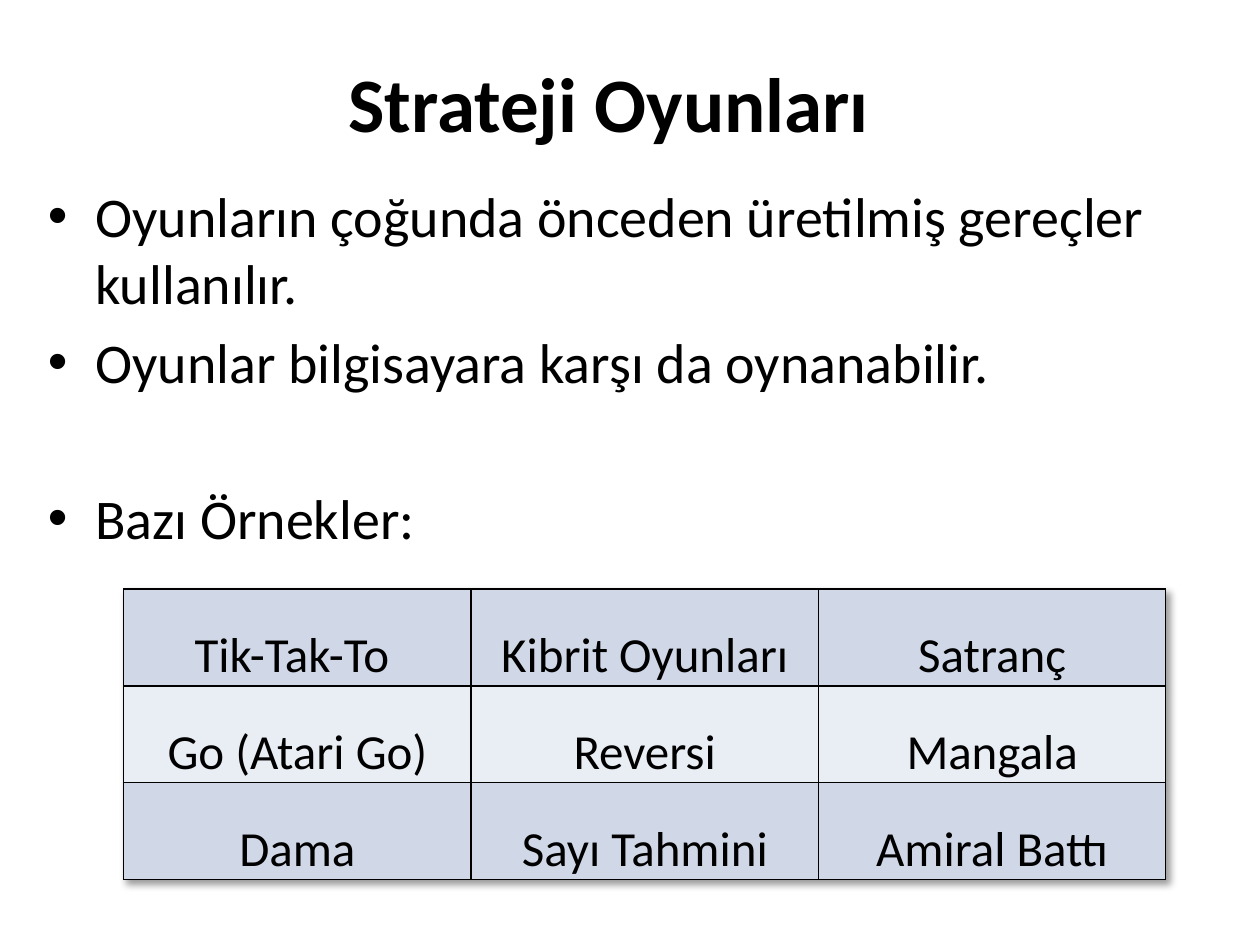
from lxml.etree import SubElement
from pptx import Presentation
from pptx.dml.color import RGBColor
from pptx.enum.text import MSO_ANCHOR, PP_ALIGN
from pptx.oxml import parse_xml
from pptx.oxml.ns import nsdecls, qn
from pptx.util import Pt

BLACK = RGBColor(0x00, 0x00, 0x00)
BANDS = [RGBColor(0xD0, 0xD8, 0xE8), RGBColor(0xE9, 0xED, 0xF4)]
FONT = "Calibri"

POINTS = [
    "Oyunların çoğunda önceden üretilmiş gereçler kullanılır.",
    "Oyunlar bilgisayara karşı da oynanabilir.",
    "Bazı Örnekler:",
]
GAMES = [
    ["Tik-Tak-To ", "Kibrit Oyunları", "Satranç"],
    ["Go (Atari Go)", "Reversi", "Mangala"],
    ["Dama", "Sayı Tahmini", "Amiral Battı"],
]


def place(shape, left, top, width, height):
    shape.left, shape.top = Pt(left), Pt(top)
    shape.width, shape.height = Pt(width), Pt(height)


def style(para, size, bold=False):
    for run in para.runs:
        font = run.font
        font.name, font.size, font.bold = FONT, Pt(size), bold
        font.color.rgb = BLACK


def add_title(slide):
    title = slide.shapes.title
    place(title, 36, 21.6, 624.2, 72.7)
    frame = title.text_frame
    frame.text = "Strateji Oyunları"
    frame.vertical_anchor = MSO_ANCHOR.MIDDLE
    para = frame.paragraphs[0]
    para.alignment = PP_ALIGN.CENTER
    style(para, 44, bold=True)


def add_list(slide):
    body = slide.placeholders[1]
    place(body, 20.2, 100.1, 680.4, 414)
    frame = body.text_frame
    frame.text = "\n".join(POINTS)
    for para in frame.paragraphs:
        style(para, 32)
    # The last point leads into the table, one line further down
    frame.paragraphs[-1].space_before = Pt(51)


def add_edges(cell):
    props = cell._tc.get_or_add_tcPr()
    for i, side in enumerate(("lnL", "lnR", "lnT", "lnB")):
        line = props.makeelement(qn(f"a:{side}"), {"w": str(Pt(1))})
        fill = SubElement(line, qn("a:solidFill"))
        SubElement(fill, qn("a:srgbClr"), val=str(BLACK))
        props.insert(i, line)


def add_shadow(table):
    effect = parse_xml(
        f'<a:effectLst {nsdecls("a")}>'
        f'<a:outerShdw blurRad="{Pt(4)}" dist="{Pt(3)}" dir="2700000" algn="tl">'
        '<a:srgbClr val="000000"><a:alpha val="40000"/></a:srgbClr>'
        '</a:outerShdw></a:effectLst>'
    )
    table._tbl.tblPr.insert(0, effect)


def fill_cell(cell, text, color):
    cell.fill.solid()
    cell.fill.fore_color.rgb = color
    cell.vertical_anchor = MSO_ANCHOR.BOTTOM
    cell.margin_left = cell.margin_right = cell.margin_top = Pt(0.7)
    cell.margin_bottom = 0
    cell.text_frame.text = text
    para = cell.text_frame.paragraphs[0]
    para.alignment = PP_ALIGN.CENTER
    style(para, 28)
    add_edges(cell)


def add_games(slide):
    frame = slide.shapes.add_table(
        len(GAMES), len(GAMES[0]), Pt(70.7), Pt(336.7), Pt(595.5), Pt(165.9)
    )
    table = frame.table
    table.first_row = False
    add_shadow(table)
    for r, row in enumerate(GAMES):
        for c, text in enumerate(row):
            fill_cell(table.cell(r, c), text, BANDS[r % 2])


def main():
    deck = Presentation()
    deck.slide_width, deck.slide_height = Pt(720), Pt(540)
    slide = deck.slides.add_slide(deck.slide_layouts[1])
    add_title(slide)
    add_list(slide)
    add_games(slide)
    deck.save("out.pptx")


if __name__ == "__main__":
    main()
